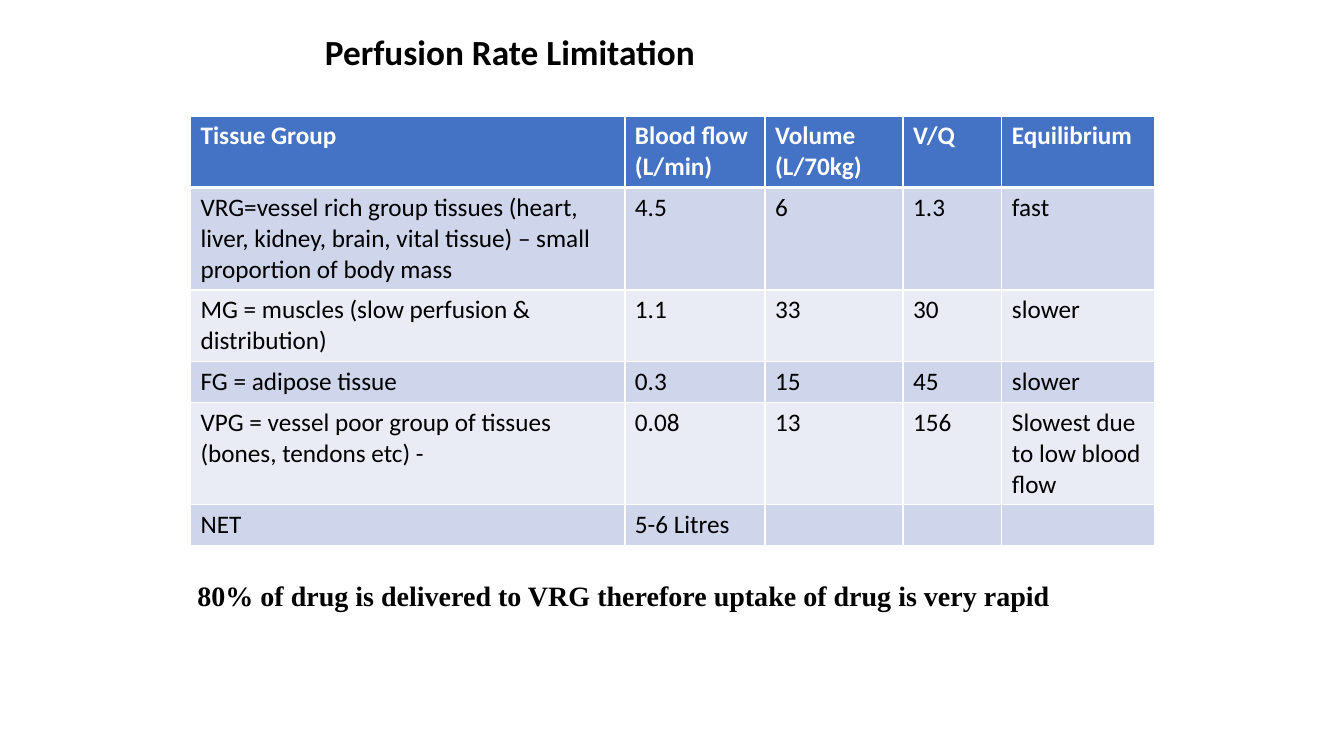
from dataclasses import dataclass

from lxml.etree import SubElement
from pptx import Presentation
from pptx.dml.color import RGBColor
from pptx.enum.text import MSO_ANCHOR, MSO_AUTO_SIZE, PP_ALIGN
from pptx.oxml.ns import qn
from pptx.util import Pt


@dataclass(frozen=True)
class Box:
    left: float
    top: float
    width: float
    height: float


@dataclass(frozen=True)
class TextStyle:
    size: float
    color: str
    bold: bool = True
    name: str = "Calibri"


TITLE_BOX = Box(133.2, 20.2, 462.2, 36.7)
TABLE_BOX = Box(136.1, 82.8, 689, 303.8)
NOTE_BOX = Box(133.9, 409.7, 627.8, 31.7)

TITLE_STYLE = TextStyle(25.2, "000000")
HEADER_STYLE = TextStyle(18, "FFFFFF")
BODY_STYLE = TextStyle(18, "000000", bold=False)
NOTE_STYLE = TextStyle(20, "000000", name="Times New Roman")

HEADER_FILL = "4472C4"
BAND_FILLS = ("E9EBF5", "CFD5EA")
BORDER_COLOR = "FFFFFF"

COLUMN_WIDTHS = (310.3, 100.1, 98.6, 70.6, 109.4)
ROW_HEIGHTS = (50.4, 72, 50.4, 29.2, 72, 29.2)
TISSUE_ROWS = (
    ("Tissue Group", "Blood flow (L/min)", "Volume (L/70kg)", "V/Q", "Equilibrium"),
    ("VRG=vessel rich group tissues (heart, liver, kidney, brain, vital tissue)"
     " – small proportion of body mass", "4.5", "6", "1.3", "fast"),
    ("MG = muscles (slow perfusion & distribution)", "1.1", "33", "30", "slower"),
    ("FG = adipose tissue", "0.3", "15", "45", "slower"),
    ("VPG = vessel poor group of tissues (bones, tendons etc) -",
     "0.08", "13", "156", "Slowest due to low blood flow"),
    ("NET", "5-6 Litres", "", "", ""),
)


def rgb(color: str) -> RGBColor:
    return RGBColor.from_string(color)


def place(box: Box) -> tuple:
    return Pt(box.left), Pt(box.top), Pt(box.width), Pt(box.height)


def write(text_frame, text: str, style: TextStyle):
    """Fill the first paragraph with styled text and return it."""
    paragraph = text_frame.paragraphs[0]
    font_values = {"size": Pt(style.size), "bold": style.bold, "name": style.name}
    targets = [paragraph.font]
    if text:
        run = paragraph.add_run()
        run.text = text
        targets = [run.font]
    for font in targets:
        for attribute, value in font_values.items():
            setattr(font, attribute, value)
        font.color.rgb = rgb(style.color)
    return paragraph


def add_borders(cell, top: float, bottom: float) -> None:
    properties = cell._tc.get_or_add_tcPr()
    for side, width in {"lnL": 1, "lnR": 1, "lnT": top, "lnB": bottom}.items():
        line = SubElement(properties, qn(f"a:{side}"), w=str(Pt(width)))
        fill = SubElement(line, qn("a:solidFill"))
        SubElement(fill, qn("a:srgbClr"), val=BORDER_COLOR)


def add_title(slide) -> None:
    title = slide.shapes.title
    title.left, title.top, title.width, title.height = place(TITLE_BOX)
    frame_values = {"vertical_anchor": MSO_ANCHOR.MIDDLE, "word_wrap": True,
                    "auto_size": MSO_AUTO_SIZE.NONE}
    for attribute, value in frame_values.items():
        setattr(title.text_frame, attribute, value)
    paragraph = write(title.text_frame, "Perfusion Rate Limitation", TITLE_STYLE)
    paragraph.alignment = PP_ALIGN.CENTER
    paragraph.line_spacing = 0.9


def add_tissue_table(slide) -> None:
    table = slide.shapes.add_table(
        len(TISSUE_ROWS), len(COLUMN_WIDTHS), *place(TABLE_BOX)).table
    for column, width in zip(table.columns, COLUMN_WIDTHS):
        column.width = Pt(width)
    for row, height in zip(table.rows, ROW_HEIGHTS):
        row.height = Pt(height)
    for row_index, texts in enumerate(TISSUE_ROWS):
        is_header = row_index == 0
        style = HEADER_STYLE if is_header else BODY_STYLE
        fill_color = HEADER_FILL if is_header else BAND_FILLS[row_index % 2]
        for column_index, text in enumerate(texts):
            cell = table.cell(row_index, column_index)
            add_borders(cell, top=3 if row_index == 1 else 1,
                        bottom=3 if is_header else 1)
            cell.fill.solid()
            cell.fill.fore_color.rgb = rgb(fill_color)
            write(cell.text_frame, text, style)


def add_note(slide) -> None:
    text_frame = slide.shapes.add_textbox(*place(NOTE_BOX)).text_frame
    text_frame.word_wrap = False
    text_frame.auto_size = MSO_AUTO_SIZE.SHAPE_TO_FIT_TEXT
    write(text_frame,
          "80% of drug is delivered to VRG therefore uptake of drug is very rapid",
          NOTE_STYLE)


def main() -> None:
    presentation = Presentation()
    presentation.slide_width = Pt(960)
    presentation.slide_height = Pt(540)
    slide = presentation.slides.add_slide(
        presentation.slide_layouts.get_by_name("Title Only"))

    # Heading, tissue comparison and conclusion
    add_title(slide)
    add_tissue_table(slide)
    add_note(slide)
    presentation.save("out.pptx")


if __name__ == "__main__":
    main()
